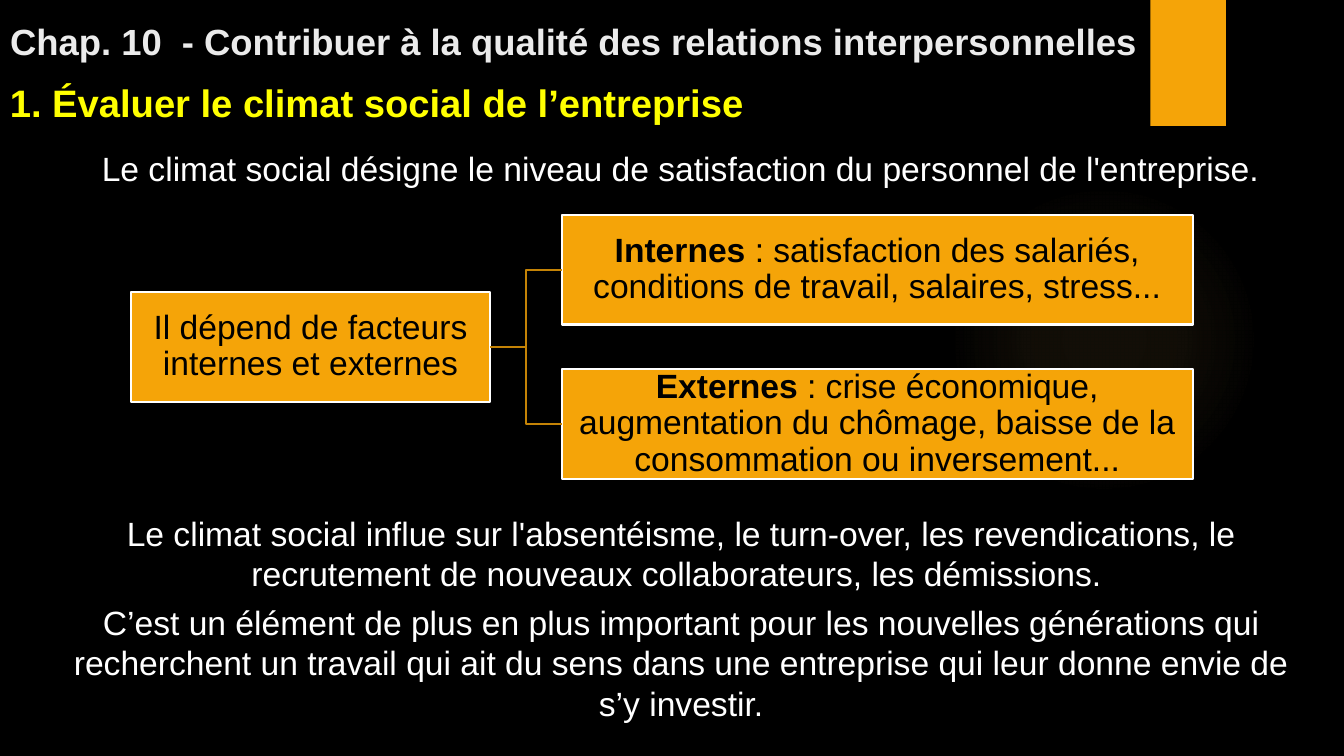
from dataclasses import dataclass

from lxml import etree
from pptx import Presentation
from pptx.dml.color import RGBColor as RGB
from pptx.enum.shapes import MSO_CONNECTOR as Link, MSO_SHAPE as Preset
from pptx.enum.text import MSO_ANCHOR as Anchor, MSO_AUTO_SIZE as AutoSize, PP_ALIGN as Align
from pptx.oxml import parse_xml
from pptx.oxml.ns import nsdecls, qn
from pptx.util import Inches, Pt


@dataclass(frozen=True)
class Theme:
    font: str = "Arial"
    background: str = "000000"
    accent: str = "F5A408"
    glow: str = "FAC96A"
    branch: str = "C48306"
    chapter: str = "EBEBEB"
    section: str = "FFFF00"
    light: str = "FFFFFF"
    dark: str = "000000"
    chapter_size: float = 26
    section_size: float = 27.3
    body_size: float = 24
    line_width: float = 1.5
    space_before: float = 6


THEME = Theme()
WIDTH, HEIGHT = 13.33, 7.5

DEFINITION = ["Le climat social désigne le niveau de satisfaction du personnel de l'entreprise. "]
ROOT = ("", "Il dépend de facteurs internes et externes")
FACTORS = [
    ("Internes", " : satisfaction des salariés, conditions de travail, salaires, stress..."),
    ("Externes", " : crise économique, augmentation du chômage, baisse de la "
                 "consommation ou inversement..."),
]
EFFECTS = [
    "Le climat social influe sur l'absentéisme, le turn-over, les revendications, "
    "le recrutement de nouveaux collaborateurs, les démissions. ",
    "C’est un élément de plus en plus important pour les nouvelles générations qui "
    "recherchent un travail qui ait du sens dans une entreprise qui leur donne envie "
    "de s’y investir.",
]


def inches(box):
    return [Inches(length) for length in box]


def style(run, size, color, bold=False):
    run.font.name = THEME.font
    run.font.size = Pt(size)
    run.font.bold = bold
    run.font.color.rgb = RGB.from_string(color)


def add_glow(slide, box):
    """Soft round light, fading out from its centre."""
    glow = slide.shapes.add_shape(Preset.OVAL, *inches(box))
    glow.shadow.inherit = False
    glow.line.fill.background()
    glow.fill.background()
    stops = "".join(
        f'<a:gs pos="{place * 1000}"><a:srgbClr val="{THEME.glow}">'
        f'<a:alpha val="{opacity * 1000}"/></a:srgbClr></a:gs>'
        for place, opacity in [(0, 7), (36, 6), (69, 0)])
    gradient = parse_xml(
        f'<a:gradFill {nsdecls("a")}><a:gsLst>{stops}</a:gsLst><a:path path="circle">'
        '<a:fillToRect l="50000" t="50000" r="50000" b="50000"/></a:path></a:gradFill>')
    properties = glow.fill._xPr
    properties.replace(properties.find(qn("a:noFill")), gradient)


def add_block(slide, box, outline=None):
    block = slide.shapes.add_shape(Preset.RECTANGLE, *inches(box))
    block.shadow.inherit = False
    block.fill.solid()
    block.fill.fore_color.rgb = RGB.from_string(THEME.accent)
    if outline:
        block.line.color.rgb = RGB.from_string(outline)
        block.line.width = Pt(THEME.line_width)
    else:
        block.line.fill.background()
    return block


def set_heading(heading, box, words, size, color):
    heading.left, heading.top, heading.width, heading.height = inches(box)
    frame = heading.text_frame
    frame.text = words
    frame.word_wrap = True
    frame.auto_size = AutoSize.NONE
    frame.vertical_anchor = Anchor.BOTTOM
    frame.paragraphs[0].alignment = Align.LEFT
    style(frame.paragraphs[0].runs[0], size, color, bold=True)


def add_headings(slide, box):
    """Chapter title above the section title, in two equal rows."""
    left, top, width, height = box
    row = 0.59
    set_heading(slide.shapes.title, (left, top, width, row),
                "Chap. 10  - Contribuer à la qualité des relations interpersonnelles",
                THEME.chapter_size, THEME.chapter)
    section = slide.shapes.add_textbox(0, 0, 0, 0)
    set_heading(section, (left, top + height - row, width, row),
                "1. Évaluer le climat social de l’entreprise",
                THEME.section_size, THEME.section)


def add_statements(slide, box, statements):
    """Centred body paragraphs."""
    frame = slide.shapes.add_textbox(*inches(box)).text_frame
    frame.word_wrap = True
    for index, statement in enumerate(statements):
        paragraph = frame.add_paragraph() if index else frame.paragraphs[0]
        paragraph.text = statement
        paragraph.alignment = Align.CENTER
        if index:
            paragraph.space_before = Pt(THEME.space_before)
        style(paragraph.runs[0], THEME.body_size, THEME.light)


def add_factor(slide, box, term, detail):
    factor = add_block(slide, box, outline=THEME.light)
    frame = factor.text_frame
    frame.word_wrap = True
    frame.vertical_anchor = Anchor.MIDDLE
    frame.margin_left = frame.margin_right = Inches(0.02)
    frame.margin_top = frame.margin_bottom = Inches(0.02)
    paragraph = frame.paragraphs[0]
    paragraph.alignment = Align.CENTER
    paragraph.line_spacing = 0.9
    for words, bold in [(term, True), (detail, False)]:
        if words:
            run = paragraph.add_run()
            run.text = words
            style(run, THEME.body_size, THEME.dark, bold)
    return factor


def add_branch(slide, start, end):
    branch = slide.shapes.add_connector(Link.ELBOW, 0, 0, 0, 0)
    branch.begin_connect(start, 3)
    branch.end_connect(end, 1)
    branch.line.color.rgb = RGB.from_string(THEME.branch)
    branch.line.width = Pt(THEME.line_width)
    etree.SubElement(branch.line._get_or_add_ln().getparent(), qn("a:effectLst"))


def add_factor_tree(slide, box):
    """Root on the left, one factor per row on the right."""
    left, top, width, height = box
    root_width, factor_width, block_height = 3.56, 6.26, 1.09
    pitch = (height - block_height) / (len(FACTORS) - 1)
    root = add_factor(
        slide, (left, top + (height - block_height) / 2, root_width, block_height), *ROOT)
    for row, (term, detail) in enumerate(FACTORS):
        factor = add_factor(
            slide, (left + width - factor_width, top + row * pitch, factor_width, block_height),
            term, detail)
        add_branch(slide, root, factor)


def build_climate_slide(deck):
    slide = deck.slides.add_slide(deck.slide_layouts[5])
    slide.background.fill.solid()
    slide.background.fill.fore_color.rgb = RGB.from_string(THEME.background)

    # Decoration
    add_glow(slide, (9.41, 1.83, 3.08, 3.08))
    add_block(slide, (11.41, 0, 0.75, HEIGHT / 6))

    # Content, from top to bottom
    add_headings(slide, (0, 0.08, 13.14, 1.21))
    add_statements(slide, (0.25, 1.42, 13.09, 0.5), DEFINITION)
    add_factor_tree(slide, (1.3, 2.13, 10.53, 2.62))
    add_statements(slide, (0.45, 5.04, 12.61, 2.3), EFFECTS)


def main():
    deck = Presentation()
    deck.slide_width, deck.slide_height = Inches(WIDTH), Inches(HEIGHT)
    build_climate_slide(deck)
    deck.save("out.pptx")


if __name__ == "__main__":
    main()
